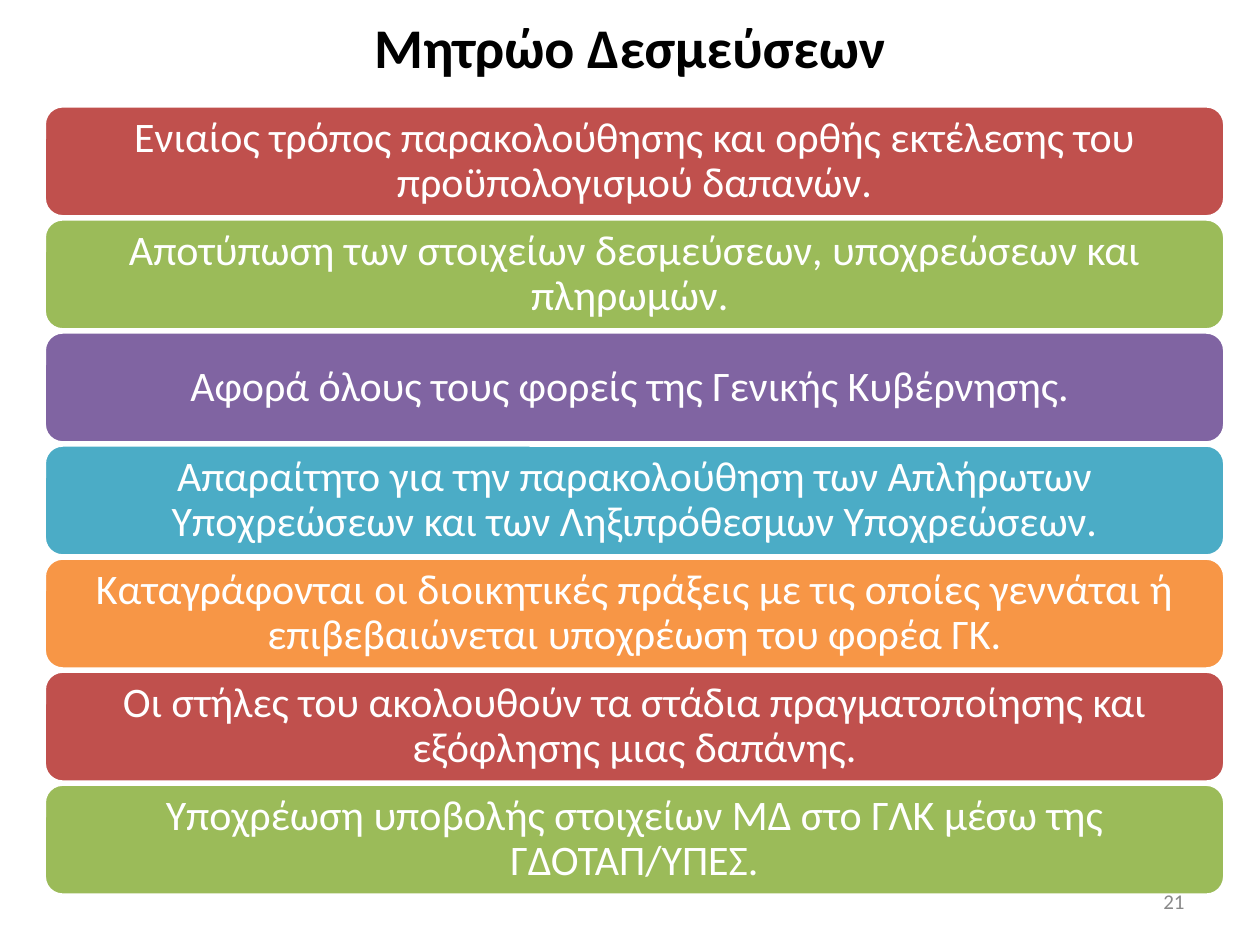
import pptx
import pptx.util
import pptx.dml.color
import pptx.enum.shapes
import pptx.enum.text

Pt = pptx.util.Pt
RGB = pptx.dml.color.RGBColor
ALIGN = pptx.enum.text.PP_ALIGN

BLACK = RGB(0x00, 0x00, 0x00)
WHITE = RGB(0xFF, 0xFF, 0xFF)
GREY = RGB(0x89, 0x89, 0x89)
RED = RGB(0xC0, 0x50, 0x4D)
GREEN = RGB(0x9B, 0xBB, 0x59)
PURPLE = RGB(0x80, 0x64, 0xA2)
AQUA = RGB(0x4B, 0xAC, 0xC6)
ORANGE = RGB(0xF7, 0x96, 0x46)
BAR_COLORS = [RED, GREEN, PURPLE, AQUA, ORANGE]

BAR_LEFT, BAR_TOP, BAR_WIDTH, BAR_HEIGHT = 25.3, 60.5, 674.6, 63.4
BAR_STEP = 64.6

TITLE = "Μητρώο Δεσμεύσεων"
POINTS = [
    "Ενιαίος τρόπος παρακολούθησης και ορθής εκτέλεσης του προϋπολογισμού δαπανών.",
    "Αποτύπωση των στοιχείων δεσμεύσεων, υποχρεώσεων και πληρωμών. ",
    "Αφορά όλους τους φορείς της Γενικής Κυβέρνησης. ",
    "Απαραίτητο για την παρακολούθηση των Απλήρωτων Υποχρεώσεων και των Ληξιπρόθεσμων Υποχρεώσεων.",
    "Καταγράφονται οι διοικητικές πράξεις με τις οποίες γεννάται ή επιβεβαιώνεται υποχρέωση του φορέα ΓΚ.",
    "Οι στήλες του ακολουθούν τα στάδια πραγματοποίησης και εξόφλησης μιας δαπάνης.",
    "Υποχρέωση υποβολής στοιχείων ΜΔ στο ΓΛΚ μέσω της ΓΔΟΤΑΠ/ΥΠΕΣ.",
]


def set_attrs(obj, values):
    for name, value in values.items():
        setattr(obj, name, value)


def write_text(sp, text, size, color, align=ALIGN.CENTER, spacing=1.0, bold=False):
    tf = sp.text_frame
    set_attrs(tf, {
        "word_wrap": True,
        "auto_size": pptx.enum.text.MSO_AUTO_SIZE.NONE,
        "vertical_anchor": pptx.enum.text.MSO_ANCHOR.MIDDLE,
        "margin_left": Pt(7.2), "margin_right": Pt(7.2),
    })
    p = tf.paragraphs[0]
    set_attrs(p, {"alignment": align, "line_spacing": spacing})
    r = p.add_run()
    r.text = text
    set_attrs(r.font, {"name": "Calibri", "size": Pt(size), "bold": bold})
    r.font.color.rgb = color


def add_title(slide, text):
    sp = slide.shapes.title
    set_attrs(sp, {"left": Pt(0), "top": Pt(9.4), "width": Pt(720), "height": Pt(33.8)})
    write_text(sp, text, 32, BLACK, bold=True)


def add_bar(slide, top, text, color):
    sp = slide.shapes.add_shape(
        pptx.enum.shapes.MSO_SHAPE.ROUNDED_RECTANGLE,
        Pt(BAR_LEFT), Pt(top), Pt(BAR_WIDTH), Pt(BAR_HEIGHT))
    sp.shadow.inherit = False
    sp.fill.solid()
    sp.fill.fore_color.rgb = color
    sp.line.color.rgb = WHITE
    sp.line.width = Pt(2)
    set_attrs(sp.text_frame, {"margin_top": Pt(7.2), "margin_bottom": Pt(7.2)})
    write_text(sp, text, 24, WHITE, spacing=0.9)


def add_page_number(slide, number):
    sp = slide.shapes.add_textbox(Pt(516), Pt(500.4), Pt(168), Pt(28.8))
    write_text(sp, number, 12, GREY, align=ALIGN.RIGHT)


def main():
    prs = pptx.Presentation()
    set_attrs(prs, {"slide_width": Pt(720), "slide_height": Pt(540)})
    slide = prs.slides.add_slide(prs.slide_layouts[5])  # title only

    add_title(slide, TITLE)

    # Stack of bars, cycling through the accent colours
    for i, text in enumerate(POINTS):
        add_bar(slide, BAR_TOP + i * BAR_STEP, text, BAR_COLORS[i % len(BAR_COLORS)])

    add_page_number(slide, "21")
    prs.save("out.pptx")


if __name__ == "__main__":
    main()
